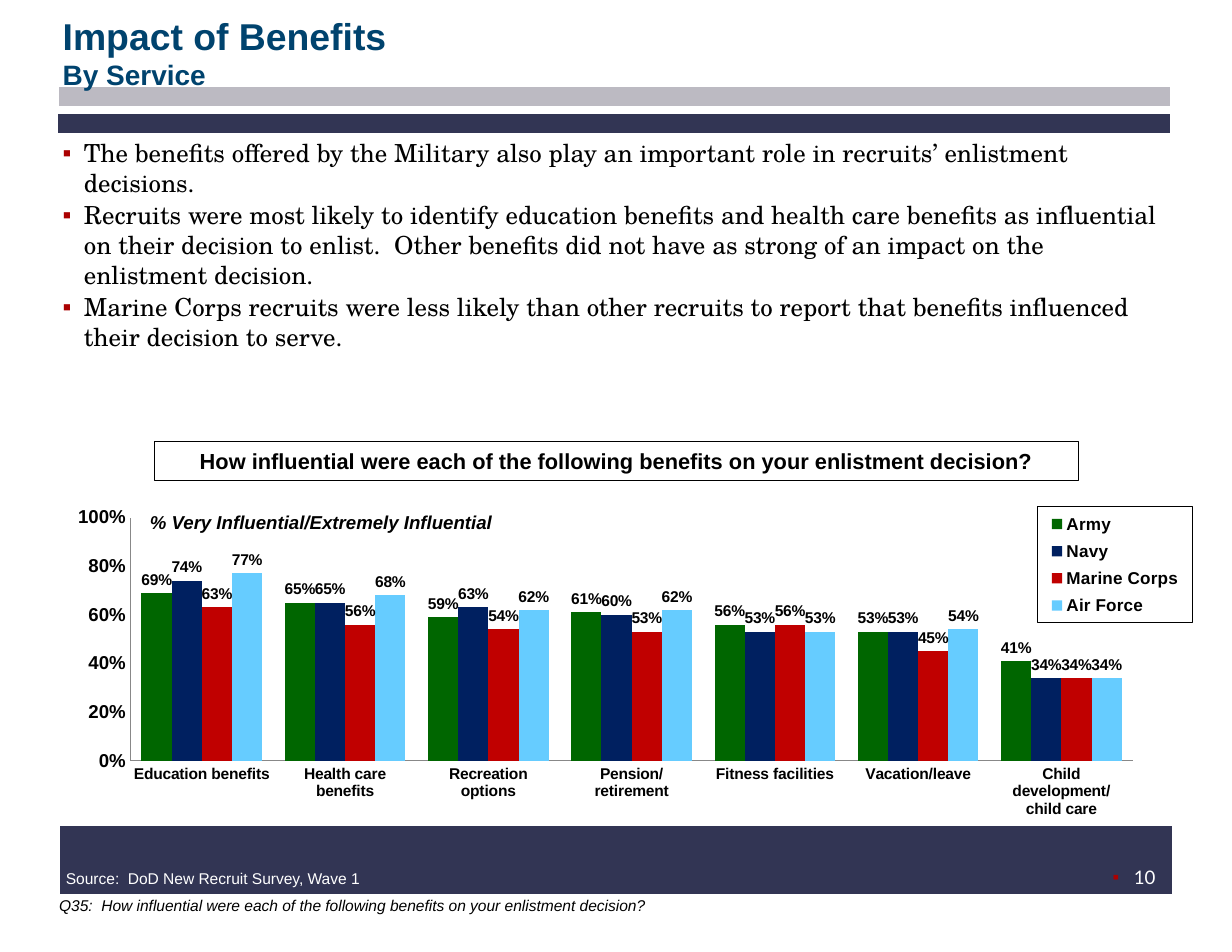
"""Build the slide on how benefits shaped enlistment, by service."""
from lxml.etree import SubElement as Sub
from pptx import Presentation
from pptx.chart.data import CategoryChartData as Data
from pptx.dml.color import RGBColor as Rgb
from pptx.enum.chart import XL_CHART_TYPE as Kind, XL_LABEL_POSITION as Spot
from pptx.enum.chart import XL_LEGEND_POSITION as Side, XL_TICK_MARK as Tick
from pptx.enum.shapes import MSO_CONNECTOR as Link, MSO_SHAPE as Shape
from pptx.enum.text import MSO_ANCHOR as Anchor, PP_ALIGN as Align
from pptx.oxml import parse_xml
from pptx.oxml.ns import qn
from pptx.util import Inches, Pt

INK = {"black": "000000", "white": "FFFFFF", "title": "00436E", "gray": "BCBAC2",
       "navy": "323554", "red": "AB0101", "axis": "888888"}
BARS = [(0.53, 0.86, 9.92, "gray", 12), (0.54, 7.68, 9.92, "navy", 44),
        (0.52, 1.1, 9.93, "navy", 12)]
TITLE = [("Impact of Benefits", 24), ("By Service", 18)]
POINTS = [
    "The benefits offered by the Military also play an important role in recruits’ "
    "enlistment decisions.",
    "Recruits were most likely to identify education benefits and health care benefits as "
    "influential on their decision to enlist.  Other benefits did not have as strong of an "
    "impact on the enlistment decision.",
    "Marine Corps recruits were less likely than other recruits to report that benefits "
    "influenced their decision to serve.",
]
ASK = "How influential were each of the following benefits on your enlistment decision?"
SCALE = "% Very Influential/Extremely Influential"
SOURCE = "Source:  DoD New Recruit Survey, Wave 1"
CATS = ["Education benefits", "Health care benefits", "Recreation options",
        "Pension/retirement", "Fitness facilities", "Vacation/leave",
        "Child development/ child care"]
SERIES = [
    ("Army", "006600", (0.69, 0.65, 0.59, 0.61, 0.56, 0.53, 0.41)),
    ("Navy", "002060", (0.74, 0.65, 0.63, 0.6, 0.53, 0.53, 0.34)),
    ("Marine Corps", "C00000", (0.63, 0.56, 0.54, 0.53, 0.56, 0.45, 0.34)),
    ("Air Force", "66CCFF", (0.77, 0.68, 0.62, 0.62, 0.53, 0.54, 0.34)),
]
PLOT = (0.08, 0.09, 0.84, 0.67)
KEY = (0.84, 0.06, 0.13, 0.32)
CHART_NS = "http://schemas.openxmlformats.org/drawingml/2006/chart"


def style(font, size, color="black", bold=False, italic=False, name="Arial"):
    font.name, font.size, font.bold, font.italic = name, Pt(size), bold, italic
    font.color.rgb = Rgb.from_string(INK[color])


def fill(frame, rows, pad=(0.1, 0.05), align=Align.LEFT, mark=False, gap=0, **look):
    frame.word_wrap = True
    frame.margin_left = frame.margin_right = Inches(pad[0])
    frame.margin_top = frame.margin_bottom = Inches(pad[1])
    for i, (text, size) in enumerate(rows):
        para = frame.paragraphs[0] if i == 0 else frame.add_paragraph()
        para.text, para.alignment = text, align
        if mark:
            bullet(para)
        if i and gap:
            para.space_before = Pt(gap)
        style(para.font, size, **look)


def bullet(para):
    props = para._p.get_or_add_pPr()
    props.set("marL", str(Inches(0.19)))
    props.set("indent", str(-Inches(0.19)))
    Sub(Sub(props, qn("a:buClr")), qn("a:srgbClr"), val=INK["red"])
    Sub(props, qn("a:buFont"), typeface="Arial")
    Sub(props, qn("a:buChar"), char="▪")


def write(slide, box, rows, **look):
    frame = slide.shapes.add_textbox(*map(Inches, box)).text_frame
    fill(frame, rows, **look)
    return frame


def rule(slide, x, y, wide, color, size):
    line = slide.shapes.add_connector(
        Link.STRAIGHT, Inches(x), Inches(y), Inches(x + wide), Inches(y))
    line.line.color.rgb = Rgb.from_string(INK[color])
    line.line.width = Pt(size)
    Sub(line._element.spPr, qn("a:effectLst"))


def place(node, spot, inner=False):
    for old in node.findall(qn("c:layout")):
        node.remove(old)
    tags = '<c:layoutTarget val="inner"/>' if inner else ""
    tags += '<c:xMode val="edge"/><c:yMode val="edge"/>'
    tags += "".join(f'<c:{tag} val="{val}"/>' for tag, val in zip("xywh", spot))
    node.insert(0 if inner else 1, parse_xml(
        f'<c:layout xmlns:c="{CHART_NS}"><c:manualLayout>{tags}</c:manualLayout></c:layout>'))


def frame_key(key):
    key.position, key.include_in_layout = Side.BOTTOM, False
    style(key.font, 11, bold=True)
    place(key._element, KEY)
    key._element.find(qn("c:overlay")).addnext(parse_xml(
        f'<c:spPr xmlns:c="{CHART_NS}" '
        'xmlns:a="http://schemas.openxmlformats.org/drawingml/2006/main">'
        f'<a:ln w="9525"><a:solidFill><a:srgbClr val="{INK["black"]}"/>'
        '</a:solidFill></a:ln></c:spPr>'))


def draw_chart(slide):
    data = Data(number_format="0%")
    data.categories = CATS
    for name, _, vals in SERIES:
        data.add_series(name, vals)
    box = map(Inches, (0.31, 4.33, 10.66, 3.24))
    chart = slide.shapes.add_chart(Kind.COLUMN_CLUSTERED, *box, data).chart
    chart.has_title = False
    style(chart.font, 18, name="Times New Roman")
    for axis, size in ((chart.category_axis, 10), (chart.value_axis, 12)):
        axis.major_tick_mark = axis.minor_tick_mark = Tick.NONE
        axis.has_major_gridlines = False
        axis.format.line.color.rgb = Rgb.from_string(INK["axis"])
        style(axis.tick_labels.font, size, bold=True)
    scale = chart.value_axis
    scale.minimum_scale, scale.maximum_scale, scale.major_unit = 0, 1, 0.2
    scale.tick_labels.number_format = "0%"
    scale.tick_labels.number_format_is_linked = False
    plot = chart.plots[0]
    plot.gap_width, plot.overlap, plot.vary_by_categories = 75, 0, False
    for bar, (_, color, _) in zip(plot.series, SERIES):
        bar.format.fill.solid()
        bar.format.fill.fore_color.rgb = Rgb.from_string(color)
        tags = bar.data_labels
        tags.show_value, tags.position = True, Spot.OUTSIDE_END
        tags.number_format, tags.number_format_is_linked = "0%", False
        style(tags.font, 10, bold=True)
    place(plot._element.getparent(), PLOT, inner=True)
    chart.has_legend = True
    frame_key(chart.legend)


def main():
    deck = Presentation()
    deck.slide_width, deck.slide_height = Inches(11), Inches(8.5)
    slide = deck.slides.add_slide(deck.slide_layouts[6])
    for bar in BARS:
        rule(slide, *bar)
    draw_chart(slide)
    write(slide, (9.54, 7.68, 1.17, 0.58), [("10", 12)], align=Align.CENTER,
          mark=True, color="white", name="Lato")
    write(slide, (0.5, 1.17, 10, 1.42), [(text, 16) for text in POINTS],
          pad=(0.06, 0.06), mark=True, gap=1.6, name="TeX Gyre Schola")
    ask = slide.shapes.add_shape(Shape.RECTANGLE, *map(Inches, (1.38, 3.94, 8.25, 0.35)))
    ask.shadow.inherit = False
    ask.fill.background()
    ask.line.color.rgb = Rgb.from_string(INK["black"])
    ask.line.width = Pt(0.75)
    fill(ask.text_frame, [(ASK, 14)], pad=(0.11, 0.06), align=Align.CENTER, bold=True)
    write(slide, (1.24, 4.51, 3.85, 0.3), [(SCALE, 12)], bold=True, italic=True)
    write(slide, (0.43, 7.95, 10.02, 0.27), [("Q35:  " + ASK, 10)], italic=True)
    write(slide, (0.49, 7.71, 5.5, 0.27), [(SOURCE, 10)], color="white")
    title = write(slide, (0.5, 0.18, 10.05, 0.57), TITLE, pad=(0.06, 0.06),
                  color="title", bold=True)
    title.vertical_anchor = Anchor.MIDDLE
    deck.save("out.pptx")


if __name__ == "__main__":
    main()
